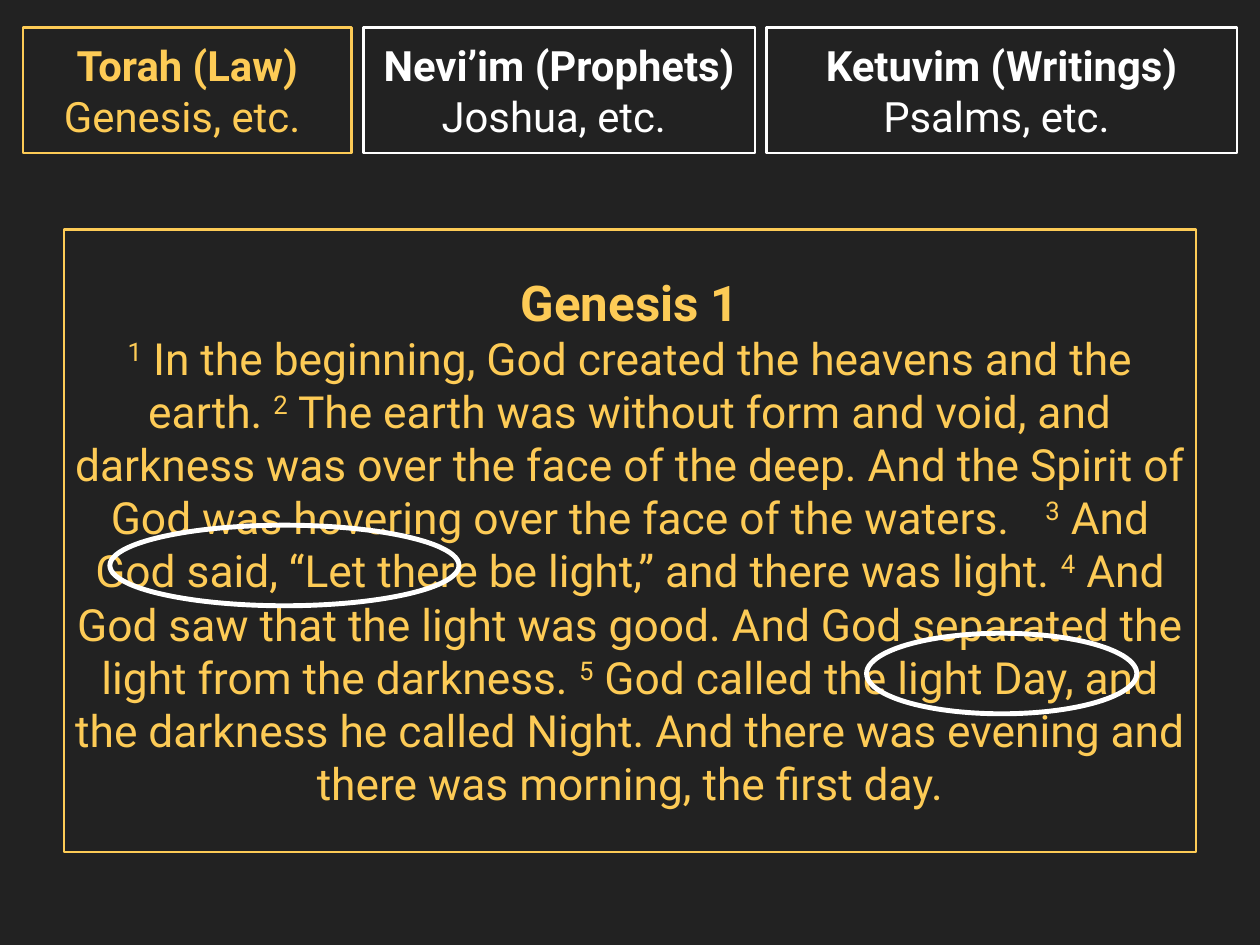
from pptx import Presentation
from pptx.dml.color import RGBColor
from pptx.enum.shapes import MSO_SHAPE
from pptx.enum.text import MSO_ANCHOR, PP_ALIGN
from pptx.util import Inches, Pt

DARK = RGBColor(0x22, 0x22, 0x22)
GOLD = RGBColor(0xFD, 0xCB, 0x56)
WHITE = RGBColor(0xFF, 0xFF, 0xFF)
FONT = "Roboto"

deck = Presentation()
deck.slide_width = Inches(14.22)
deck.slide_height = Inches(10.67)
page = deck.slides.add_slide(deck.slide_layouts[6])
page.background.fill.solid()
page.background.fill.fore_color.rgb = DARK


def add_outline(kind, left, top, width, height, color, weight):
    shape = page.shapes.add_shape(
        kind, Inches(left), Inches(top), Inches(width), Inches(height))
    shape.shadow.inherit = False
    shape.fill.background()
    shape.line.color.rgb = color
    shape.line.width = Pt(weight)
    return shape


def add_text_box(left, top, width, height, color, lines):
    box = add_outline(MSO_SHAPE.RECTANGLE, left, top, width, height, color, 2)
    box.fill.solid()
    box.fill.fore_color.rgb = DARK
    frame = box.text_frame
    frame.word_wrap = True
    frame.vertical_anchor = MSO_ANCHOR.MIDDLE
    frame.margin_left = frame.margin_right = Inches(0.06)
    frame.margin_top = frame.margin_bottom = Inches(0.06)
    for index, (text, size, bold) in enumerate(lines):
        para = frame.add_paragraph() if index else frame.paragraphs[0]
        para.text = text
        para.alignment = PP_ALIGN.CENTER
        para.font.name = FONT
        para.font.size = Pt(size)
        para.font.bold = bold
        para.font.color.rgb = color
    return box


sections = [
    ("Torah (Law)", "Genesis, etc. ", 3.71, GOLD),
    ("Nevi’im (Prophets)", "Joshua, etc. ", 4.42, WHITE),
    ("Ketuvim (Writings)", "Psalms, etc. ", 5.31, WHITE),
]
gap = 0.13
left = 2 * gap
for name, books, width, color in sections:
    add_text_box(left, 0.31, width, 1.42, color,
                 [(name, 34, True), (books, 34, False)])
    left += width + gap

verses = [
    " In the beginning, God created the heavens and the earth.",
    " The earth was without form and void, and darkness was over the face of "
    "the deep. And the Spirit of God was hovering over the face of the waters.",
    " And God said, “Let there be light,” and there was light.",
    " And God saw that the light was good. And God separated the light from "
    "the darkness.",
    " God called the light Day, and the darkness he called Night. And there "
    "was evening and there was morning, the first day.",
]
wide_gap_verse = 3
passage = add_text_box(0.72, 2.59, 12.78, 7.03, GOLD,
                       [("Genesis 1", 40, True), ("", 36, False)])
para = passage.text_frame.paragraphs[1]
for number, verse in enumerate(verses, start=1):
    if number > 1:
        space = para.add_run()
        space.text = " "
        if number == wide_gap_verse:
            space._r.get_or_add_rPr().set("spc", "2000")
    marker = para.add_run()
    marker.text = str(number)
    marker._r.get_or_add_rPr().set("baseline", "32000")
    span = para.add_run()
    span.text = verse

for left, top, width in [(1.24, 5.93, 3.94), (9.78, 7.15, 3.05)]:
    add_outline(MSO_SHAPE.OVAL, left, top, width, 0.91, WHITE, 4)

deck.save("out.pptx")
